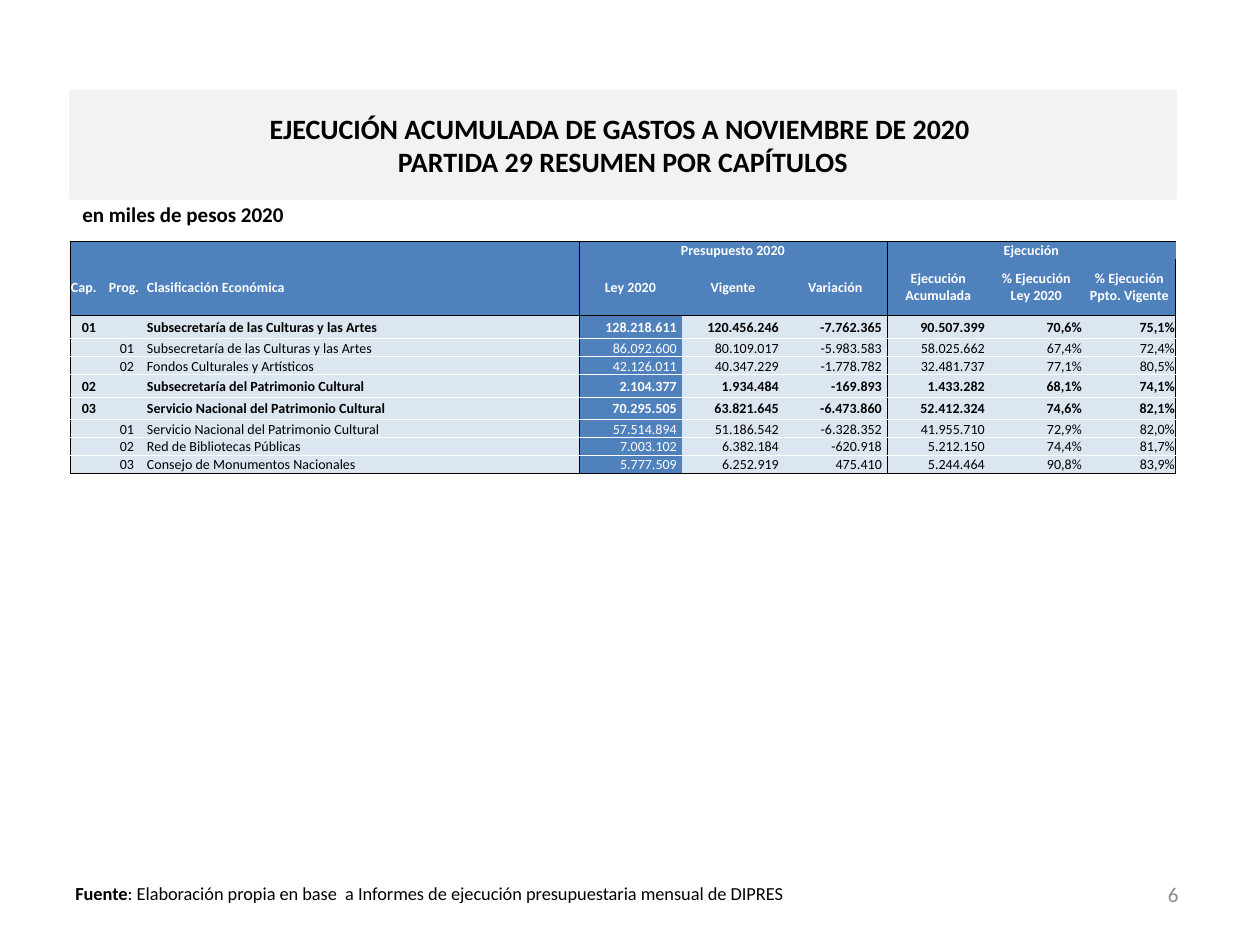
from lxml.etree import SubElement
from pptx import Presentation
from pptx.dml.color import RGBColor
from pptx.enum.shapes import MSO_SHAPE
from pptx.enum.text import MSO_ANCHOR, PP_ALIGN
from pptx.oxml.ns import qn
from pptx.util import Pt

TITLE = "EJECUCIÓN ACUMULADA DE GASTOS A NOVIEMBRE DE 2020 \nPARTIDA 29 RESUMEN POR CAPÍTULOS"
UNITS = "en miles de pesos 2020"
SOURCE = "Fuente"
SOURCE_TEXT = ": Elaboración propia en base  a Informes de ejecución presupuestaria mensual de DIPRES"
PAGE = "6"
GROUPS = {3: "Presupuesto 2020", 6: "Ejecución"}
HEADER = ["Cap.", "Prog.", "Clasificación Económica", "Ley 2020", "Vigente", "Variación",
          "Ejecución Acumulada", "% Ejecución Ley 2020", "% Ejecución Ppto. Vigente"]
ROWS = [
    ["01", "", "Subsecretaría de las Culturas y las Artes",
     "128.218.611", "120.456.246", "-7.762.365", "90.507.399", "70,6%", "75,1%"],
    ["", "01", "Subsecretaría de las Culturas y las Artes",
     "86.092.600", "80.109.017", "-5.983.583", "58.025.662", "67,4%", "72,4%"],
    ["", "02", "Fondos Culturales y Artísticos",
     "42.126.011", "40.347.229", "-1.778.782", "32.481.737", "77,1%", "80,5%"],
    ["02", "", "Subsecretaría del Patrimonio Cultural",
     "2.104.377", "1.934.484", "-169.893", "1.433.282", "68,1%", "74,1%"],
    ["03", "", "Servicio Nacional del Patrimonio Cultural",
     "70.295.505", "63.821.645", "-6.473.860", "52.412.324", "74,6%", "82,1%"],
    ["", "01", "Servicio Nacional del Patrimonio Cultural",
     "57.514.894", "51.186.542", "-6.328.352", "41.955.710", "72,9%", "82,0%"],
    ["", "02", "Red de Bibliotecas Públicas",
     "7.003.102", "6.382.184", "-620.918", "5.212.150", "74,4%", "81,7%"],
    ["", "03", "Consejo de Monumentos Nacionales",
     "5.777.509", "6.252.919", "475.410", "5.244.464", "90,8%", "83,9%"],
]
COL_W = [38, 38, 433, 103, 102, 103, 103, 93, 93]
ROW_H = [18, 56, 24, 18, 17, 23, 22, 18, 18, 17]
BLUE, PALE, GREY, BLACK, WHITE = "4F81BD", "DCE6F1", "F2F2F2", "000000", "FFFFFF"


def px(n):
    return round(n * 914400 / 126)


def rgb(color):
    return RGBColor.from_string(color)


def write(p, text, size=8, bold=False, color=BLACK, align=PP_ALIGN.LEFT):
    p.alignment = align
    for i, line in enumerate(text.split("\n")):
        if i:
            p.add_line_break()
        r = p.add_run()
        r.text = line
        r.font.name, r.font.size, r.font.bold = "Calibri", Pt(size), bold
        r.font.color.rgb = rgb(color)


def text_box(s, x, y, w, h, anchor=MSO_ANCHOR.TOP):
    tf = s.shapes.add_textbox(px(x), px(y), px(w), px(h)).text_frame
    tf.word_wrap = True
    tf.vertical_anchor = anchor
    return tf.paragraphs[0]


def add_color(parent, color):
    fill = SubElement(parent, qn("a:solidFill"))
    return SubElement(fill, qn("a:srgbClr"), val=color)


def set_border(cell, side, color):
    ln = SubElement(cell._tc.get_or_add_tcPr(), qn("a:ln" + side), w=str(Pt(0.5)))
    if color:
        add_color(ln, color)
    else:
        SubElement(ln, qn("a:noFill"))


def row_line(edge):
    if edge == 1:
        return None
    return BLACK if edge in (0, 2, len(ROW_H)) else WHITE


def col_line(edge):
    return BLACK if edge % 3 == 0 else None


def body_align(col):
    return PP_ALIGN.CENTER if col < 2 else PP_ALIGN.JUSTIFY if col == 2 else PP_ALIGN.RIGHT


def add_title(s):
    sp = s.shapes.add_shape(MSO_SHAPE.RECTANGLE, px(70), px(91), px(1106), px(108))
    sp.shadow.inherit = False
    sp.fill.solid()
    sp.fill.fore_color.rgb = rgb(GREY)
    sp.line.color.rgb = rgb(GREY)
    sp.line.width = Pt(0.75)
    effects = sp._element.spPr.find(qn("a:effectLst"))
    shadow = SubElement(effects, qn("a:outerShdw"), blurRad=str(Pt(4)), dist=str(Pt(3)),
                        dir="2700000", algn="tl", rotWithShape="0")
    SubElement(add_color(shadow, BLACK), qn("a:alpha"), val="40000")
    tf = sp.text_frame
    tf.word_wrap = True
    tf.vertical_anchor = MSO_ANCHOR.MIDDLE
    write(tf.paragraphs[0], TITLE, size=16, bold=True, align=PP_ALIGN.CENTER)


def add_budget_table(s):
    groups = [GROUPS.get(col, "") for col in range(len(COL_W))]
    lines = [groups, HEADER] + ROWS
    table = s.shapes.add_table(len(ROW_H), len(COL_W), px(70), px(241),
                               px(sum(COL_W)), px(sum(ROW_H))).table
    table.first_row = table.horz_banding = False
    for col, w in enumerate(COL_W):
        table.columns[col].width = px(w)
    for row, h in enumerate(ROW_H):
        table.rows[row].height = px(h)
    for col in GROUPS:
        table.cell(0, col).merge(table.cell(0, col + 2))
    for row, values in enumerate(lines):
        head = row < 2
        for col, value in enumerate(values):
            cell = table.cell(row, col)
            set_border(cell, "L", col_line(col))
            set_border(cell, "R", col_line(col + 1))
            set_border(cell, "T", row_line(row))
            set_border(cell, "B", row_line(row + 1))
            blue = head or col == 3
            cell.fill.solid()
            cell.fill.fore_color.rgb = rgb(BLUE if blue else PALE)
            cell.margin_left = cell.margin_top = px(1)
            cell.margin_right = px(5 if not head and 3 <= col <= 6 else 1)
            cell.margin_bottom = 0
            cell.vertical_anchor = MSO_ANCHOR.BOTTOM if row == 0 else MSO_ANCHOR.MIDDLE
            p = cell.text_frame.paragraphs[0]
            if value:
                head_align = PP_ALIGN.LEFT if col < 3 else PP_ALIGN.CENTER
                write(p, value, bold=head or values[0] != "", color=WHITE if blue else BLACK,
                      align=head_align if head else body_align(col))
            else:
                SubElement(p._p, qn("a:endParaRPr"), sz="800")


def main():
    prs = Presentation()
    prs.slide_width, prs.slide_height = px(1260), px(945)
    s = prs.slides.add_slide(prs.slide_layouts[6])
    p = text_box(s, 63, 876, 745, 35)
    write(p, SOURCE, size=10.5, bold=True)
    write(p, SOURCE_TEXT, size=10.5)
    add_title(s)
    write(text_box(s, 897, 869, 294, 50, MSO_ANCHOR.MIDDLE), PAGE, size=12,
          color="8C8C8C", align=PP_ALIGN.RIGHT)
    write(text_box(s, 70, 195, 1126, 52), UNITS, size=12, bold=True)
    add_budget_table(s)
    prs.save("out.pptx")


if __name__ == "__main__":
    main()
